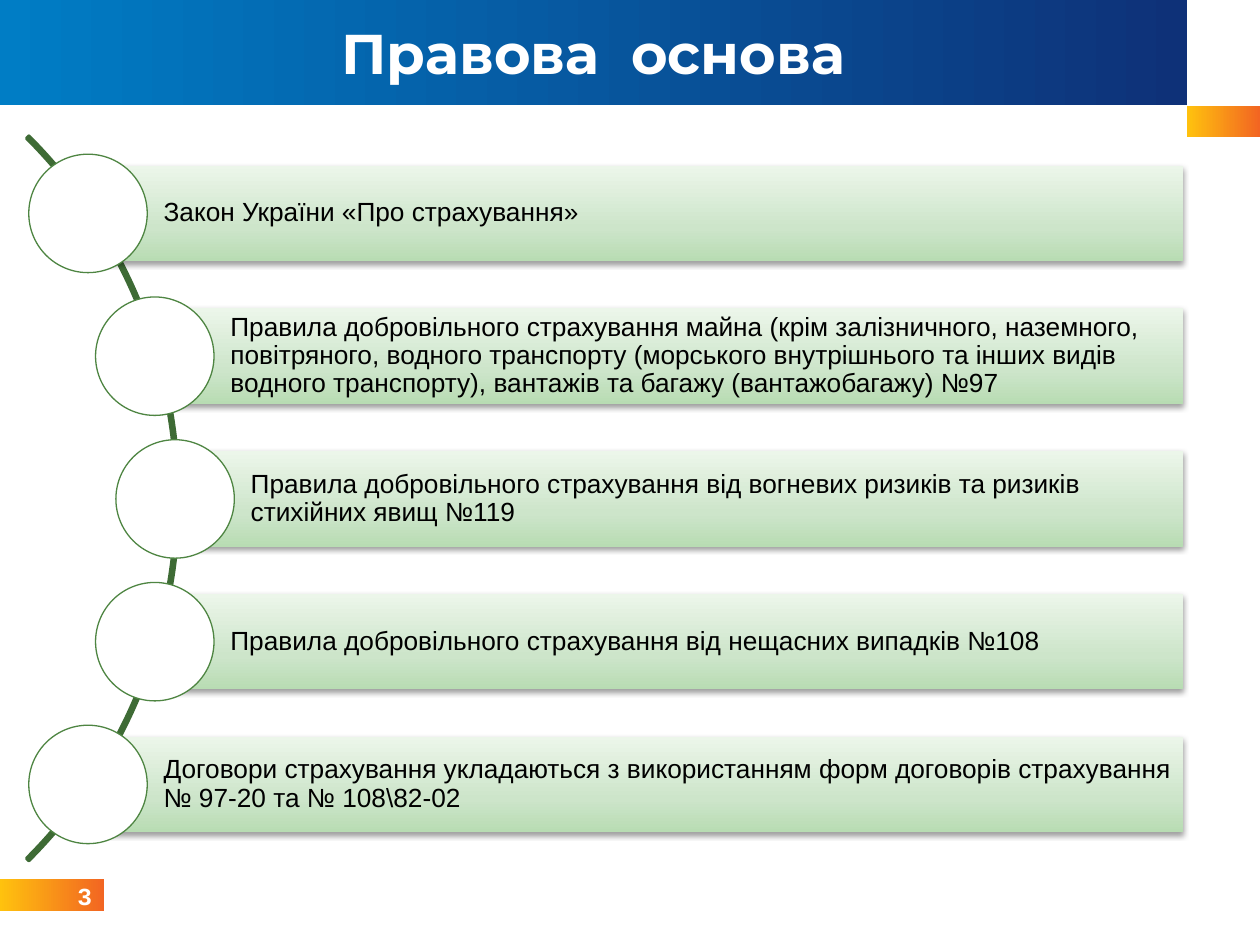
from dataclasses import dataclass
from math import sqrt

from lxml import etree
from pptx import Presentation
from pptx.dml.color import RGBColor
from pptx.enum import shapes, text
from pptx.oxml import ns
from pptx.util import Inches, Pt

WIDTH, HEIGHT = 10, 7.5
BLUE = ((0, "007DC5"), (100, "0E3178"))
ORANGE = ((0, "FFC20E"), (100, "F26522"))
GREEN = ((0, "B8DCB3"), (35, "CDE5CA"), (100, "ECF6EA"))

# Rows of the list: nodes ride on an arc, bars run to a common right edge
MIDDLE, PITCH = 3.96, 1.133
NODE_ARC_X, NODE_ARC_RADIUS = -2.67, 4.06
BAR_RIGHT, BAR_HEIGHT, NODE_SIZE = 9.39, 0.76, 0.94
ITEMS = (
    "Закон України «Про страхування»",
    "Правила добровільного страхування майна (крім залізничного, наземного, "
    "повітряного, водного транспорту (морського внутрішнього та інших видів "
    "водного транспорту), вантажів та багажу (вантажобагажу) №97",
    "Правила добровільного страхування від вогневих ризиків та ризиків стихійних явищ №119",
    "Правила добровільного страхування від нещасних випадків №108",
    "Договори страхування укладаються з використанням форм договорів страхування "
    "№ 97-20 та № 108\\82-02",
)


@dataclass
class Area:
    left: float
    top: float
    width: float
    height: float

    def lengths(self):
        return [Inches(n) for n in (self.left, self.top, self.width, self.height)]


@dataclass
class Style:
    font: str
    size: float
    color: str
    bold: bool
    align: text.PP_ALIGN


TITLE = Style("Montserrat", 32, "FFFFFF", True, text.PP_ALIGN.CENTER)
NUMBER = Style("Courier New", 14, "FFFFFF", True, text.PP_ALIGN.RIGHT)
ITEM = Style("Arial", 15, "000000", False, text.PP_ALIGN.LEFT)


def rgb(color: str) -> RGBColor:
    return RGBColor.from_string(color)


def add_element(parent, tag: str, **attributes):
    return etree.SubElement(parent, ns.qn(tag), attributes)


def fill_gradient(shape, stops, angle: float = 0) -> None:
    """Angle is counter-clockwise, in degrees."""
    shape.fill.gradient()
    shape.fill.gradient_angle = angle
    stop_list = shape.fill._xPr.find(".//" + ns.qn("a:gsLst"))
    for old in list(stop_list):
        stop_list.remove(old)
    for position, color in stops:
        stop = add_element(stop_list, "a:gs", pos=str(position * 1000))
        add_element(stop, "a:srgbClr", val=color)


def drop_shadow(shape) -> None:
    effects = shape._element.spPr.find(ns.qn("a:effectLst"))
    shadow = add_element(effects, "a:outerShdw", blurRad="40000", dist="20000",
                         dir="5400000", rotWithShape="0")
    color = add_element(shadow, "a:srgbClr", val="000000")
    add_element(color, "a:alpha", val="38000")


def add_shape(page, kind, area: Area, line: str = "", weight: float = 0):
    shape = page.shapes.add_shape(kind, *area.lengths())
    shape.shadow.inherit = False
    if line:
        shape.line.color.rgb = rgb(line)
        shape.line.width = Pt(weight)
    else:
        shape.line.fill.background()
    return shape


def write(shape, words: str, style: Style, wrap: bool = False):
    frame = shape.text_frame
    frame.auto_size = text.MSO_AUTO_SIZE.NONE
    frame.word_wrap = wrap
    frame.vertical_anchor = text.MSO_ANCHOR.MIDDLE
    para = frame.paragraphs[0]
    para.alignment = style.align
    span = para.add_run()
    span.text = words
    span.font.name = style.font
    span.font.size = Pt(style.size)
    span.font.bold = style.bold
    span.font.color.rgb = rgb(style.color)
    return frame


def add_item(page, row: int, words: str) -> None:
    offset = (row - (len(ITEMS) - 1) / 2) * PITCH
    x = NODE_ARC_X + sqrt(NODE_ARC_RADIUS ** 2 - offset ** 2)
    y = MIDDLE + offset
    bar = add_shape(page, shapes.MSO_SHAPE.RECTANGLE,
                    Area(x, y - BAR_HEIGHT / 2, BAR_RIGHT - x, BAR_HEIGHT))
    fill_gradient(bar, GREEN, 90)
    drop_shadow(bar)
    frame = write(bar, words, ITEM, wrap=True)
    frame.margin_left = Inches(0.6)
    frame.margin_top = frame.margin_right = frame.margin_bottom = Inches(0.04)
    frame.paragraphs[0].line_spacing = 0.9
    node = add_shape(page, shapes.MSO_SHAPE.OVAL,
                     Area(x - NODE_SIZE / 2, y - NODE_SIZE / 2, NODE_SIZE, NODE_SIZE),
                     "4E8542", 0.75)
    node.fill.solid()
    node.fill.fore_color.rgb = rgb("FFFFFF")


def main() -> None:
    deck = Presentation()
    deck.slide_width, deck.slide_height = Inches(WIDTH), Inches(HEIGHT)
    page = deck.slides.add_slide(deck.slide_layouts[5])

    # Title band
    title = page.shapes.title
    title.left, title.top, title.width, title.height = Area(0, 0, 9.42, 0.83).lengths()
    fill_gradient(title, BLUE)
    write(title, "Правова  основа", TITLE)

    # Orange tabs, the first with the page number
    number = add_shape(page, shapes.MSO_SHAPE.RECTANGLE, Area(0, 6.98, 0.83, 0.25))
    corner = add_shape(page, shapes.MSO_SHAPE.RECTANGLE, Area(9.42, 0.84, 0.58, 0.25))
    for tab in (number, corner):
        fill_gradient(tab, ORANGE)
    write(number, "3", NUMBER)

    # Arc behind the list
    arc = add_shape(page, shapes.MSO_SHAPE.BLOCK_ARC, Area(-6.71, -0.11, 8.13, 8.13),
                    "3E6B35", 2)
    arc.fill.background()
    for index, value in enumerate((189, 27, 0.003)):
        arc.adjustments[index] = value

    # List
    for row, words in enumerate(ITEMS):
        add_item(page, row, words)

    deck.save("out.pptx")


if __name__ == "__main__":
    main()
